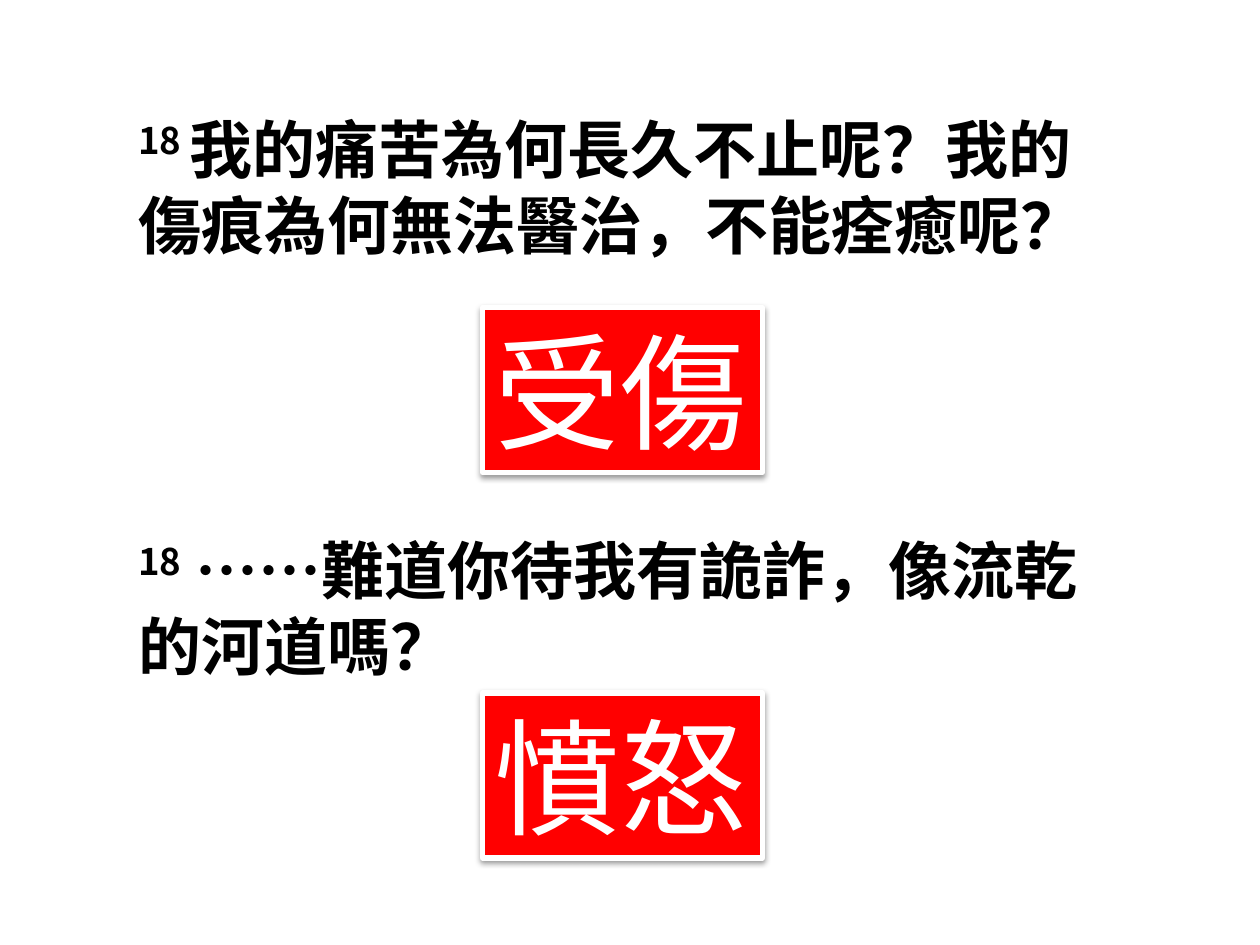
"""Build a slide pairing two verse excerpts with the emotion each one shows."""
from dataclasses import dataclass

import lxml.etree
import pptx
import pptx.dml.color
import pptx.enum.shapes
import pptx.enum.text
import pptx.oxml
import pptx.oxml.ns
import pptx.util
from pptx.util import Inches

FONT = "Noto Sans CJK TC"
SHADOW = (
    f'<a:effectLst {pptx.oxml.ns.nsdecls("a")}>'
    '<a:outerShdw blurRad="40000" dist="20000" dir="5400000" rotWithShape="0">'
    '<a:srgbClr val="000000"><a:alpha val="38000"/></a:srgbClr>'
    "</a:outerShdw></a:effectLst>"
)


@dataclass(frozen=True)
class Passage:
    number: str
    verse: str
    verse_top: float
    emotion: str
    emotion_top: float


PASSAGES = (
    Passage("18 ", "我的痛苦為何長久不止呢？我的傷痕為何無法醫治，不能痊癒呢？", 0.83, "受傷", 2.44),
    Passage("18", " ……難道你待我有詭詐，像流乾的河道嗎？", 4.17, "憤怒", 5.5),
)


def color(value: str) -> pptx.dml.color.RGBColor:
    return pptx.dml.color.RGBColor.from_string(value)


def format_run(run, size: float, ink: str, bold: bool = False) -> None:
    run.font.name = FONT
    run.font.size = pptx.util.Pt(size)
    run.font.bold = bold
    run.font.color.rgb = color(ink)
    east_asian = lxml.etree.Element(pptx.oxml.ns.qn("a:ea"), typeface=FONT)
    properties = run._r.get_or_add_rPr()
    properties.find(pptx.oxml.ns.qn("a:latin")).addnext(east_asian)


def draw_emotion(slide, passage: Passage) -> None:
    emotion = slide.shapes.add_shape(
        pptx.enum.shapes.MSO_SHAPE.RECTANGLE,
        Inches(3.83), Inches(passage.emotion_top), Inches(2.22), Inches(1.31),
    )
    emotion.fill.solid()
    emotion.fill.fore_color.rgb = color("FF0000")
    emotion.line.color.rgb = color("FFFFFF")
    emotion.line.width = pptx.util.Pt(3)
    emotion._element.spPr.append(pptx.oxml.parse_xml(SHADOW))
    frame = emotion.text_frame
    frame.text = passage.emotion
    frame.word_wrap = False
    frame.auto_size = pptx.enum.text.MSO_AUTO_SIZE.SHAPE_TO_FIT_TEXT
    format_run(frame.paragraphs[0].runs[0], 72, "FFFFFF")


def draw_verse(slide, passage: Passage) -> None:
    verse = slide.shapes.add_textbox(
        Inches(1), Inches(passage.verse_top), Inches(8), Inches(1.31)
    )
    frame = verse.text_frame
    frame.word_wrap = True
    frame.auto_size = pptx.enum.text.MSO_AUTO_SIZE.SHAPE_TO_FIT_TEXT
    frame.text = passage.number
    number = frame.paragraphs[0].runs[0]
    words = frame.paragraphs[0].add_run()
    words.text = passage.verse
    for run in (number, words):
        format_run(run, 36, "000000", bold=True)
    number._r.get_or_add_rPr().set("baseline", "30000")


def main() -> None:
    presentation = pptx.Presentation()
    presentation.slide_width = Inches(10)
    presentation.slide_height = Inches(7.5)
    slide = presentation.slides.add_slide(presentation.slide_layouts[6])
    for passage in PASSAGES:
        draw_emotion(slide, passage)
        draw_verse(slide, passage)
    presentation.save("out.pptx")


if __name__ == "__main__":
    main()
